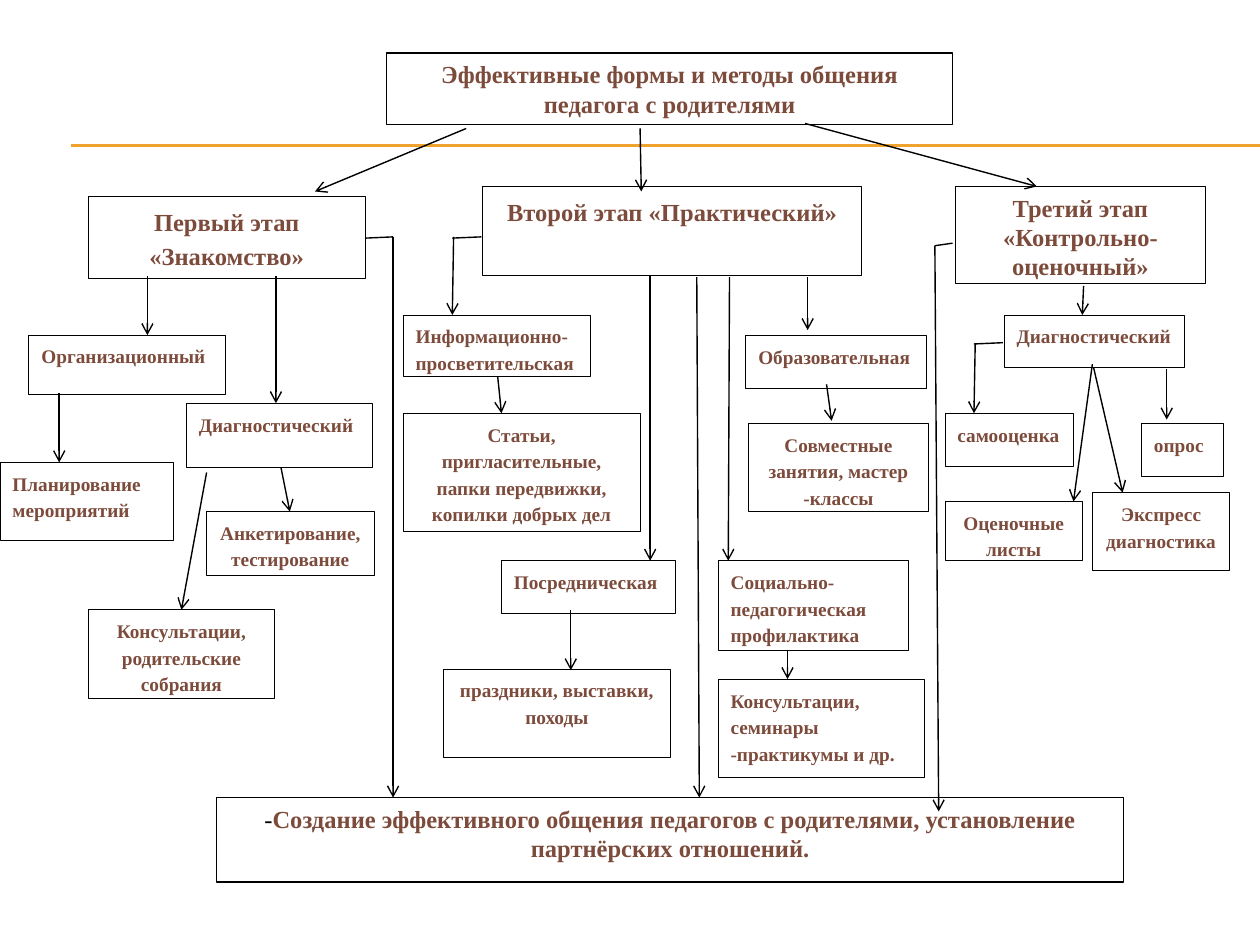
"""Build a flow chart slide on how teachers work with parents, stage by stage."""
from dataclasses import dataclass

from lxml import etree
from pptx import Presentation
from pptx.dml.color import RGBColor
from pptx.enum.shapes import MSO_CONNECTOR, MSO_SHAPE
from pptx.enum.text import MSO_ANCHOR, PP_ALIGN
from pptx.oxml.ns import qn
from pptx.util import Inches, Pt

STRAIGHT = MSO_CONNECTOR.STRAIGHT
RECTANGLE = MSO_SHAPE.RECTANGLE
TOP = MSO_ANCHOR.TOP
LEFT, CENTER = PP_ALIGN.LEFT, PP_ALIGN.CENTER

WHITE = RGBColor(0xFF, 0xFF, 0xFF)
BLACK = RGBColor(0x00, 0x00, 0x00)
BROWN = RGBColor(0x7C, 0x4B, 0x3B)
AMBER = RGBColor(0xF0, 0xA2, 0x2E)
FONT = "Times New Roman"


@dataclass
class Box:
    left: float
    top: float
    width: float
    height: float
    text: str
    align: PP_ALIGN = LEFT
    size: int = 11
    spaced: bool = True
    border: float = 0.5


@dataclass
class Line:
    x1: float
    y1: float
    x2: float
    y2: float
    arrow: bool = True
    color: RGBColor = BLACK
    width: float = 0.79


RULES = [Line(0.56, y, 10, y, False, AMBER, 0.75) for y in (1.15, 1.16)]

TITLE = Box(3.07, 0.42, 4.49, 0.57,
            "Эффективные формы и методы общения\nпедагога с родителями",
            CENTER, 14, False, 0.75)
RESULT = Box(1.72, 6.33, 7.2, 0.67,
             "Создание эффективного общения педагогов с родителями, "
             "установление партнёрских отношений.", CENTER, 14, False, 0.75)

STAGES = [
    Box(0.7, 1.56, 2.2, 0.65, "Первый этап «Знакомство»", CENTER, 14),
    Box(3.83, 1.48, 3.01, 0.71, "Второй этап «Практический»", CENTER, 14),
    Box(7.58, 1.48, 1.99, 0.77, "Третий этап\n«Контрольно-оценочный»", CENTER, 14, False),
]

FORMS = [
    Box(0.23, 2.66, 1.56, 0.47, "Организационный"),
    Box(1.48, 3.2, 1.48, 0.51, "Диагностический"),
    Box(0, 3.67, 1.38, 0.62, "Планирование мероприятий"),
    Box(1.64, 4.06, 1.33, 0.51, "Анкетирование, тестирование", CENTER),
    Box(0.7, 4.84, 1.48, 0.7, "Консультации, родительские собрания", CENTER),
    Box(3.2, 2.5, 1.49, 0.49, "Информационно-просветительская"),
    Box(3.2, 3.28, 1.88, 0.94,
        "Статьи, пригласительные, папки передвижки, копилки добрых дел", CENTER),
    Box(3.98, 4.45, 1.38, 0.42, "Посредническая"),
    Box(3.52, 5.31, 1.8, 0.7, "праздники, выставки, походы", CENTER),
    Box(5.92, 2.66, 1.43, 0.42, "Образовательная"),
    Box(5.94, 3.36, 1.43, 0.7, "Совместные занятия, мастер -классы", CENTER),
    Box(5.7, 4.45, 1.51, 0.71, "Социально-педагогическая профилактика"),
    Box(5.7, 5.39, 1.64, 0.78, "Консультации, семинары -практикумы и др."),
    Box(7.97, 2.5, 1.43, 0.42, "Диагностический"),
    Box(7.5, 3.28, 1.02, 0.42, "самооценка"),
    Box(9.06, 3.36, 0.65, 0.42, "опрос"),
    Box(7.5, 3.98, 1.09, 0.47, "Оценочные листы", CENTER),
    Box(8.67, 3.91, 1.09, 0.62, "Экспресс диагностика", CENTER),
]

ARROWS = [
    Line(3.7, 1.02, 2.5, 1.52),
    Line(5.08, 1.02, 5.09, 1.52),
    Line(6.39, 0.98, 8.23, 1.48),
    Line(1.17, 2.19, 1.17, 2.66),
    Line(2.19, 2.19, 2.19, 3.2),
    Line(0.47, 3.12, 0.47, 3.67),
    Line(1.64, 3.75, 1.44, 4.84),
    Line(2.23, 3.71, 2.3, 4.06),
    Line(3.12, 1.88, 3.12, 6.33),
    Line(3.6, 1.88, 3.59, 2.5),
    Line(3.95, 2.99, 3.98, 3.28),
    Line(5.16, 2.19, 5.16, 4.45),
    Line(4.53, 4.84, 4.53, 5.32),
    Line(5.53, 2.2, 5.55, 6.33),
    Line(5.79, 2.2, 5.78, 4.45),
    Line(6.25, 5.16, 6.25, 5.39),
    Line(6.41, 2.2, 6.41, 2.62),
    Line(6.56, 3.05, 6.6, 3.34),
    Line(7.42, 1.95, 7.45, 6.44),
    Line(8.6, 2.27, 8.59, 2.5),
    Line(7.74, 2.73, 7.73, 3.28),
    Line(8.67, 2.89, 8.52, 3.98),
    Line(8.68, 2.92, 8.91, 3.91),
    Line(9.26, 2.93, 9.26, 3.33),
]

ELBOWS = [
    Line(2.9, 1.89, 3.12, 1.88, False),
    Line(3.59, 1.89, 3.82, 1.88, False),
    Line(7.42, 1.95, 7.56, 1.93, False),
    Line(7.73, 2.73, 7.96, 2.72, False),
]


def format_run(r, size: int, color: RGBColor, bold: bool) -> None:
    r.font.name = FONT
    r.font.size = Pt(size)
    r.font.bold = bold
    r.font.color.rgb = color


def draw_box(s, box: Box, mark: str = "") -> None:
    sp = s.shapes.add_shape(RECTANGLE, Inches(box.left), Inches(box.top),
                            Inches(box.width), Inches(box.height))
    sp.shadow.inherit = False
    sp.fill.solid()
    sp.fill.fore_color.rgb = WHITE
    sp.line.color.rgb = BLACK
    sp.line.width = Pt(box.border)
    tf = sp.text_frame
    tf.word_wrap = True
    tf.vertical_anchor = TOP
    tf.text = mark or box.text
    if mark:
        tf.paragraphs[0].add_run().text = box.text
    for p in tf.paragraphs:
        p.alignment = box.align
        if box.spaced:
            p.line_spacing = 1.15
            p.space_after = Pt(10)
        for r in p.runs:
            is_mark = r.text == mark
            format_run(r, box.size, BLACK if is_mark else BROWN, not is_mark)


def draw_line(s, line: Line) -> None:
    cn = s.shapes.add_connector(STRAIGHT, Inches(line.x1), Inches(line.y1),
                                Inches(line.x2), Inches(line.y2))
    cn.line.color.rgb = line.color
    cn.line.width = Pt(line.width)
    if line.arrow:
        etree.SubElement(cn.line._get_or_add_ln(), qn("a:tailEnd"), type="arrow")
    etree.SubElement(cn._element.spPr, qn("a:effectLst"))


def main() -> None:
    prs = Presentation()
    prs.slide_width, prs.slide_height = Inches(10), Inches(7.5)
    s = prs.slides.add_slide(prs.slide_layouts[6])
    for rule in RULES:
        draw_line(s, rule)
    for box in [TITLE, *STAGES, *FORMS]:
        draw_box(s, box)
    draw_box(s, RESULT, mark="-")
    for line in ARROWS + ELBOWS:
        draw_line(s, line)
    prs.save("out.pptx")


if __name__ == "__main__":
    main()
